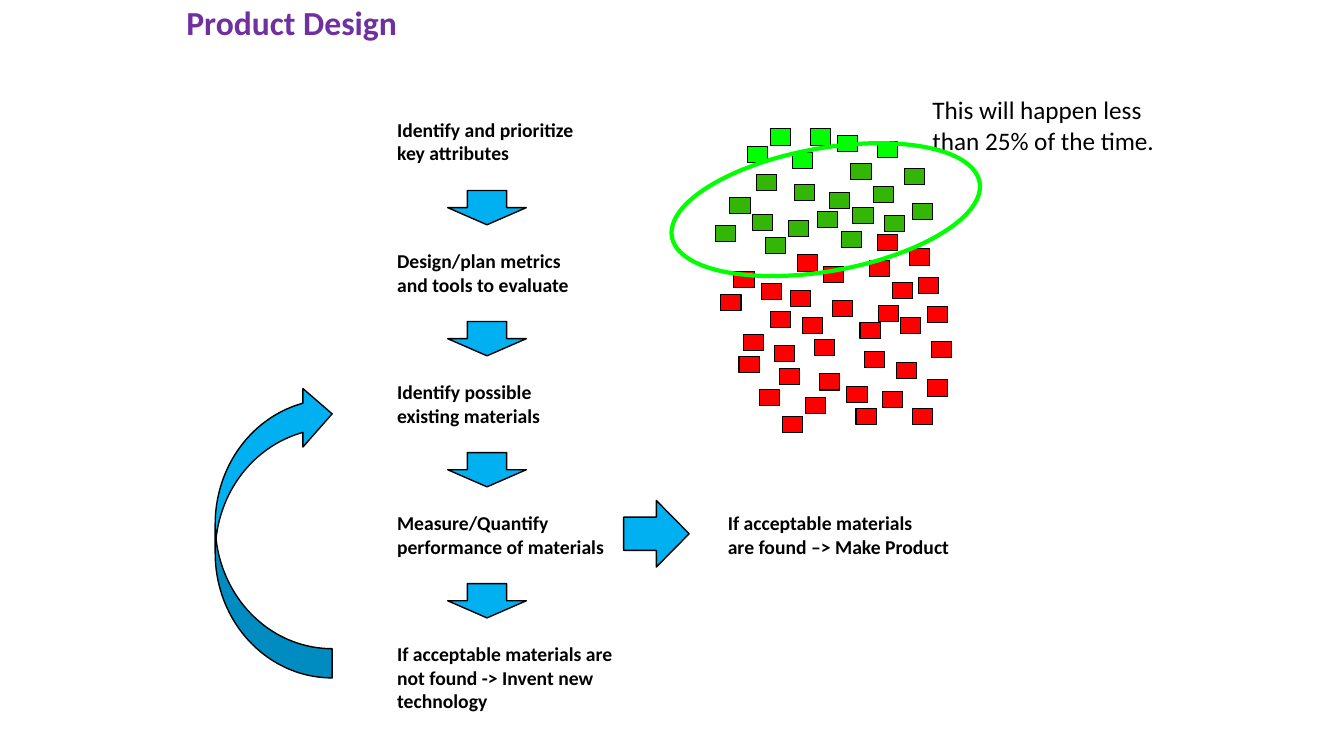
from dataclasses import dataclass

from pptx import Presentation
from pptx.dml.color import RGBColor
from pptx.enum.shapes import MSO_SHAPE as Shape
from pptx.enum.text import MSO_AUTO_SIZE as AutoSize
from pptx.util import Inches, Pt


@dataclass(frozen=True)
class Theme:
    font: str = "Calibri"
    title_size: int = 24
    note_size: int = 18
    step_size: int = 14
    purple: str = "7030A0"
    black: str = "000000"
    blue: str = "00B0F0"
    bright_green: str = "00FF00"
    dark_green: str = "34B606"
    red: str = "FF0000"


theme = Theme()
presentation = Presentation()
presentation.slide_width = Inches(13.33)
presentation.slide_height = Inches(7.5)
slide = presentation.slides.add_slide(presentation.slide_layouts[6])


def add_text(box, text, size=theme.step_size, color=theme.black, bold=True):
    """Add an unwrapped text box with one paragraph per line of text."""
    frame = slide.shapes.add_textbox(*map(Inches, box)).text_frame
    frame.text = text
    frame.word_wrap = False
    frame.auto_size = AutoSize.SHAPE_TO_FIT_TEXT
    font_format = {"name": theme.font, "size": Pt(size), "bold": bold}
    for paragraph in frame.paragraphs:
        for name, value in font_format.items():
            setattr(paragraph.font, name, value)
        paragraph.font.color.rgb = RGBColor.from_string(color)


def add_figure(kind, box, fill, line=theme.black, weight=1, rotation=0):
    """Add an outlined preset shape; a fill of None leaves it hollow."""
    shape = slide.shapes.add_shape(kind, *map(Inches, box))
    shape.shadow.inherit = False
    shape.rotation = rotation
    if fill:
        shape.fill.solid()
        shape.fill.fore_color.rgb = RGBColor.from_string(fill)
    else:
        shape.fill.background()
    shape.line.color.rgb = RGBColor.from_string(line)
    shape.line.width = Pt(weight)
    return shape


add_text((1.75, -0.03, 2.31, 0.5), "Product Design", theme.title_size, theme.purple)

# Process steps, with a down arrow between neighbours
steps = [
    ("Identify and prioritize\nkey attributes", 2.01, 0.57),
    ("Design/plan metrics\nand tools to evaluate", 1.91, 0.57),
    ("Identify possible\nexisting materials", 1.63, 0.57),
    ("Measure/Quantify\nperformance of materials", 2.27, 0.57),
    ("If acceptable materials are\nnot found -> Invent new\ntechnology", 2.39, 0.81),
]
step_pitch = 1.3
for index, (text, width, height) in enumerate(steps):
    add_text((3.84, 1.12 + index * step_pitch, width, height), text)
    if index < len(steps) - 1:
        arrow_top = 1.89 + index * step_pitch
        add_figure(Shape.DOWN_ARROW, (4.44, arrow_top, 0.78, 0.34), theme.blue)

# Loop back to the materials step, and the way out to the product
loop_arrow = add_figure(
    Shape.CURVED_UP_ARROW, (1.26, 4.69, 2.91, 1.16), theme.blue, rotation=90
)
loop_arrow.element.spPr.xfrm.set("flipH", "1")
add_figure(Shape.DOWN_ARROW, (6.18, 4.97, 0.66, 0.65), theme.blue, rotation=270)
add_text(
    (7.12, 5.02, 2.45, 0.57), "If acceptable materials\nare found –> Make Product"
)

# Candidate materials: left and top of each square, by colour
materials = {
    theme.bright_green: [
        (8.31, 1.34), (8.04, 1.28), (7.86, 1.51), (7.41, 1.45), (7.64, 1.28),
        (8.7, 1.4),
    ],
    theme.dark_green: [
        (8.44, 1.62), (8.23, 1.91), (7.88, 1.83), (7.82, 2.19), (8.35, 2.3),
        (8.11, 2.1), (7.5, 1.73), (7.46, 2.13), (7.24, 1.96), (7.1, 2.24),
        (7.59, 2.36), (8.77, 2.14), (8.97, 1.67), (8.66, 1.85), (8.46, 2.06),
        (9.05, 2.02),
    ],
    theme.red: [
        (8.17, 2.64), (7.91, 2.53), (7.84, 2.88), (8.26, 2.98), (9.02, 2.47),
        (8.62, 2.58), (9.11, 2.75), (7.55, 2.81), (7.28, 2.69), (7.15, 2.92),
        (7.64, 3.09), (8.93, 3.15), (8.71, 3.03), (8.53, 3.2), (8.85, 2.8),
        (7.68, 3.43), (7.37, 3.32), (7.33, 3.54), (7.73, 3.66), (8.08, 3.37),
        (8.57, 3.49), (9.2, 3.77), (8.89, 3.6), (8.75, 3.88), (9.05, 4.05),
        (8.4, 3.83), (8.13, 3.71), (7.99, 3.94), (8.49, 4.05), (7.96, 3.15),
        (7.53, 3.86), (7.76, 4.13), (9.24, 3.39), (9.2, 3.04), (8.7, 2.33),
    ],
}
for color, positions in materials.items():
    for left, top in positions:
        add_figure(Shape.RECTANGLE, (left, top, 0.2, 0.16), color, weight=0.75)

add_text(
    (9.15, 0.89, 2.43, 0.71),
    "This will happen less\nthan 25% of the time.",
    theme.note_size,
    bold=False,
)
add_figure(
    Shape.OVAL, (6.64, 1.47, 3.1, 1.22), None, theme.bright_green, 3, rotation=349.9
)

presentation.save("out.pptx")
